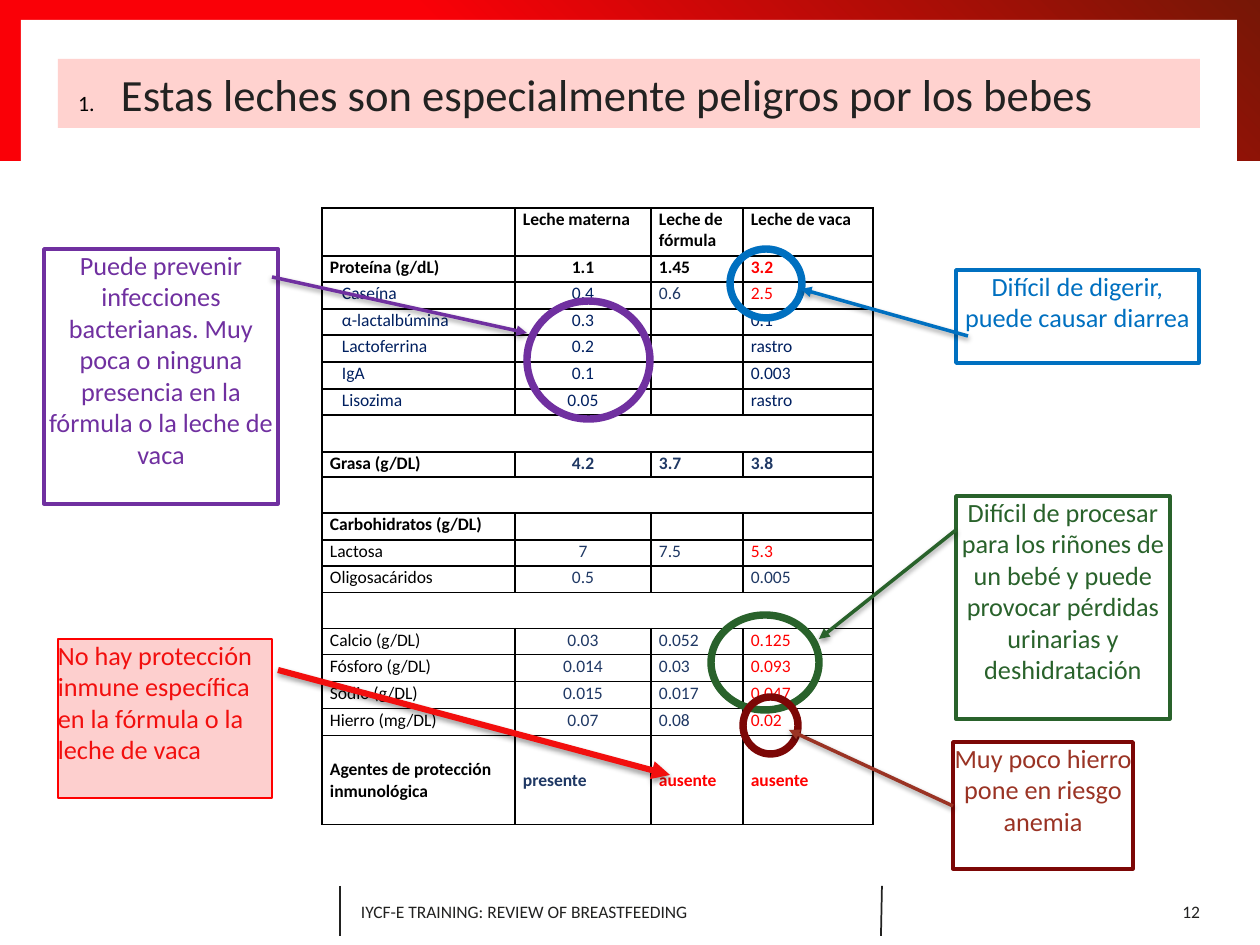
from lxml import etree
from pptx import Presentation, util as u
from pptx.dml.color import RGBColor
from pptx.enum import shapes, text
from pptx.oxml import parse_xml
from pptx.oxml.ns import nsdecls, qn

SCALE = 914400 // 126
FONT = "Calibri"
BLACK = RGBColor(0x00, 0x00, 0x00)
WHITE = RGBColor(0xFF, 0xFF, 0xFF)
INK = RGBColor(0x22, 0x22, 0x21)
RED = RGBColor(0xFF, 0x00, 0x00)
NAVY = RGBColor(0x00, 0x20, 0x60)
SLATE = RGBColor(0x1F, 0x38, 0x64)
BLUE = RGBColor(0x00, 0x70, 0xC0)
PURPLE = RGBColor(0x70, 0x30, 0xA0)
GREEN = RGBColor(0x29, 0x62, 0x2B)
MAROON = RGBColor(0x7C, 0x07, 0x06)
RUST = RGBColor(0x9A, 0x33, 0x24)
SCARLET = RGBColor(0xF2, 0x0F, 0x0E)
PINK = RGBColor(0xFD, 0xCF, 0xCE)
TITLE_PINK = RGBColor(0xFF, 0xCE, 0xCA)
BAND_RED = RGBColor(0xFA, 0x00, 0x07)
BAND_DARK = RGBColor(0x76, 0x17, 0x06)

TITLE = "Estas leches son especialmente peligros por los bebes"
FOOTER = "IYCF-E TRAINING: REVIEW OF BREASTFEEDING"
PAGE = "12"

COLUMNS = [193, 136, 92, 130]
HEAD, TOTAL, PART, PLAIN, GAP, AGENTS = "head", "total", "part", "plain", "gap", "agents"
ROWS = [
    (48, HEAD, ["", "Leche materna", "Leche de fórmula", "Leche de vaca"]),
    (26, HEAD, ["Proteína (g/dL)", "1.1", "1.45", "3.2"]),
    (27, PART, ["Caseína", "0.4", "0.6", "2.5"]),
    (26, PART, ["α-lactalbúmina", "0.3", "", "0.1"]),
    (27, PART, ["Lactoferrina", "0.2", "", "rastro"]),
    (27, PART, ["IgA", "0.1", "", "0.003"]),
    (26, PART, ["Lisozima", "0.05", "", "rastro"]),
    (37, GAP, [""]),
    (25, TOTAL, ["Grasa (g/DL)", "4.2", "3.7", "3.8"]),
    (36, GAP, [""]),
    (27, TOTAL, ["Carbohidratos (g/DL)", "", "", ""]),
    (26, PLAIN, ["Lactosa", "7", "7.5", "5.3"]),
    (27, PLAIN, ["Oligosacáridos", "0.5", "", "0.005"]),
    (36, GAP, [""]),
    (26, PLAIN, ["Calcio (g/DL)", "0.03", "0.052", "0.125"]),
    (27, PLAIN, ["Fósforo (g/DL)", "0.014", "0.03", "0.093"]),
    (27, PLAIN, ["Sodio (g/DL)", "0.015", "0.017", "0.047"]),
    (27, PLAIN, ["Hierro (mg/DL)", "0.07", "0.08", "0.02"]),
    (89, AGENTS, ["Agentes de protección inmunológica", "presente", "ausente", "ausente"]),
]
BOLD_KINDS = {HEAD, TOTAL, AGENTS}
ALARMS = {"3.2", "2.5", "5.3", "0.125", "0.093", "0.047", "0.02", "ausente"}

CENTER, LEFT, RIGHT = text.PP_ALIGN.CENTER, text.PP_ALIGN.LEFT, text.PP_ALIGN.RIGHT
CALLOUTS = [
    dict(words="Difícil de digerir, puede causar diarrea", box=(956, 270, 243, 93),
         edge=BLUE, ink=BLUE, ring=(730, 249, 72, 69), arrow=(968, 336, 801, 289)),
    dict(words="Puede prevenir infecciones bacterianas. Muy poca o ninguna presencia "
               "en la fórmula o la leche de vaca", box=(44, 249, 234, 255),
         edge=PURPLE, ink=PURPLE, ring=(527, 301, 123, 118), arrow=(272, 277, 527, 333)),
    dict(words="Difícil de procesar para los riñones de un bebé y puede provocar "
               "pérdidas urinarias y deshidratación", box=(956, 496, 214, 223),
         edge=GREEN, ink=GREEN, ring=(711, 615, 108, 95), arrow=(956, 530, 819, 639)),
    dict(words="Muy poco hierro pone en riesgo anemia", box=(953, 742, 180, 127),
         edge=MAROON, ink=RUST, ring=(743, 697, 55, 57), arrow=(953, 806, 789, 730)),
    dict(words="No hay protección inmune específica en la fórmula o la leche de vaca",
         box=(58, 639, 214, 159), edge=RED, ink=SCARLET, fill=PINK, align=LEFT,
         edge_width=0.75, arrow_width=3.5, arrow=(278, 670, 670, 775)),
]


def px(*lengths):
    return [u.Emu(length * SCALE) for length in lengths]


def write(frame, words, size=10, color=INK, bold=False, align=LEFT,
          anchor=text.MSO_ANCHOR.TOP, margins=(0, 0, 0, 0)):
    frame.word_wrap = True
    frame.vertical_anchor = anchor
    frame.margin_left, frame.margin_top, frame.margin_right, frame.margin_bottom = px(*margins)
    paragraph = frame.paragraphs[0]
    paragraph.alignment = align
    run = paragraph.add_run()
    run.text = words
    run.font.name, run.font.size, run.font.bold = FONT, u.Pt(size), bold
    run.font.color.rgb = color
    return paragraph


def add_shape(slide, kind, place, fill=None, edge=None, width=1):
    shape = slide.shapes.add_shape(kind, *px(*place))
    shape.shadow.inherit = False
    if fill is None:
        shape.fill.background()
    else:
        shape.fill.solid()
        shape.fill.fore_color.rgb = fill
    if edge is None:
        shape.line.fill.background()
    else:
        shape.line.color.rgb = edge
        shape.line.width = u.Pt(width)
    return shape


def add_line(slide, ends, color, width, arrow=False):
    line = slide.shapes.add_connector(shapes.MSO_CONNECTOR.STRAIGHT, *px(*ends))
    line.line.color.rgb = color
    line.line.width = u.Pt(width)
    properties = line._element.spPr
    effects = etree.SubElement(properties, qn("a:effectLst"))
    if arrow:
        etree.SubElement(properties.find(qn("a:ln")), qn("a:tailEnd"), type="triangle")
        effects.append(parse_xml(
            f'<a:outerShdw {nsdecls("a")} blurRad="39400" dist="20300" dir="5400000" rotWithShape="0">'
            '<a:srgbClr val="000000"><a:alpha val="38000"/></a:srgbClr></a:outerShdw>'))


def add_bands(slide):
    rectangle = shapes.MSO_SHAPE.RECTANGLE
    band = add_shape(slide, rectangle, (0, 0, 1260, 161))
    band.fill.gradient()
    band.fill.gradient_angle = 45
    stops = zip(band.fill.gradient_stops, [(0.4, BAND_RED), (1, BAND_DARK)])
    for stop, (position, color) in stops:
        stop.position = position
        stop.color.rgb = color
    add_shape(slide, rectangle, (21, 20, 1216, 149), fill=WHITE)


def add_title(slide):
    title = slide.shapes.title
    slide.shapes._spTree.append(title._element)
    title.left, title.top, title.width, title.height = px(58, 59, 1142, 69)
    title.fill.solid()
    title.fill.fore_color.rgb = TITLE_PINK
    color = title._element.spPr.find(qn("a:solidFill"))[0]
    etree.SubElement(color, qn("a:alpha"), val="90000")
    paragraph = write(title.text_frame, TITLE, size=25.5, anchor=text.MSO_ANCHOR.MIDDLE)
    properties = paragraph._p.get_or_add_pPr()
    properties.set("marL", str(u.Inches(0.5)))
    properties.set("indent", str(-u.Inches(0.34)))
    bullet_color = etree.SubElement(properties, qn("a:buClr"))
    etree.SubElement(bullet_color, qn("a:srgbClr"), val=str(BLACK))
    etree.SubElement(properties, qn("a:buSzPct"), val="49000")
    etree.SubElement(properties, qn("a:buAutoNum"), type="arabicPeriod")


def add_borders(cell):
    properties = cell._tc.get_or_add_tcPr()
    for side in ("lnL", "lnR", "lnT", "lnB"):
        properties.append(parse_xml(
            f'<a:{side} {nsdecls("a")} w="12700"><a:solidFill>'
            f'<a:srgbClr val="{BLACK}"/></a:solidFill></a:{side}>'))


def cell_color(kind, column, words):
    if words in ALARMS:
        return RED
    if kind == HEAD or (column == 0 and kind != PART):
        return BLACK
    return NAVY if kind == PART and words != "0.6" else SLATE


def add_milk_table(slide):
    heights = [height for height, _, _ in ROWS]
    frame = slide.shapes.add_table(len(ROWS), len(COLUMNS),
                                   *px(322, 208, sum(COLUMNS), sum(heights)))
    table = frame.table
    for column, width in zip(table.columns, COLUMNS):
        column.width = px(width)[0]
    for index, (height, kind, values) in enumerate(ROWS):
        table.rows[index].height = px(height)[0]
        for cell in table.rows[index].cells:
            add_borders(cell)
            cell.fill.background()
        if kind == GAP:
            table.cell(index, 0).merge(table.cell(index, len(COLUMNS) - 1))
        for column, words in enumerate(values):
            cell = table.cell(index, column)
            indent = 20 if kind == PART and column == 0 else 8
            cell.margin_left, cell.margin_top, cell.margin_right, cell.margin_bottom = px(indent, 1, 8, 0)
            if not words:
                etree.SubElement(cell.text_frame.paragraphs[0]._p, qn("a:endParaRPr"), sz="1000")
                continue
            centered = column == 1 and index > 0 and kind != AGENTS
            anchor = text.MSO_ANCHOR.MIDDLE if kind == AGENTS else text.MSO_ANCHOR.TOP
            cell.vertical_anchor = anchor
            write(cell.text_frame, words, color=cell_color(kind, column, words),
                  bold=kind in BOLD_KINDS, align=CENTER if centered else LEFT,
                  anchor=anchor, margins=(indent, 1, 8, 0))


def add_callout(slide, callout):
    box = add_shape(slide, shapes.MSO_SHAPE.RECTANGLE, callout["box"], fill=callout.get("fill"),
                    edge=callout["edge"], width=callout.get("edge_width", 2))
    write(box.text_frame, callout["words"], size=15, color=callout["ink"],
          align=callout.get("align", CENTER))
    if "ring" in callout:
        add_shape(slide, shapes.MSO_SHAPE.OVAL, callout["ring"], edge=callout["edge"], width=4.25)
    add_line(slide, callout["arrow"], callout["ink"], callout.get("arrow_width", 2), arrow=True)


def add_footer(slide):
    for ends in [(340, 886, 340, 936), (882, 886, 881, 936)]:
        add_line(slide, ends, INK, 1)
    for words, place, align in [(FOOTER, (348, 887, 527, 50), LEFT), (PAGE, (1106, 887, 107, 50), RIGHT)]:
        box = slide.shapes.add_textbox(*px(*place))
        write(box.text_frame, words, align=align, anchor=text.MSO_ANCHOR.MIDDLE, margins=(13, 6, 13, 6))


def main():
    presentation = Presentation()
    presentation.slide_width, presentation.slide_height = px(1260, 945)
    slide = presentation.slides.add_slide(presentation.slide_layouts[5])
    add_bands(slide)
    add_title(slide)
    add_footer(slide)
    add_milk_table(slide)
    for callout in CALLOUTS:
        add_callout(slide, callout)
    presentation.save("out.pptx")


if __name__ == "__main__":
    main()
